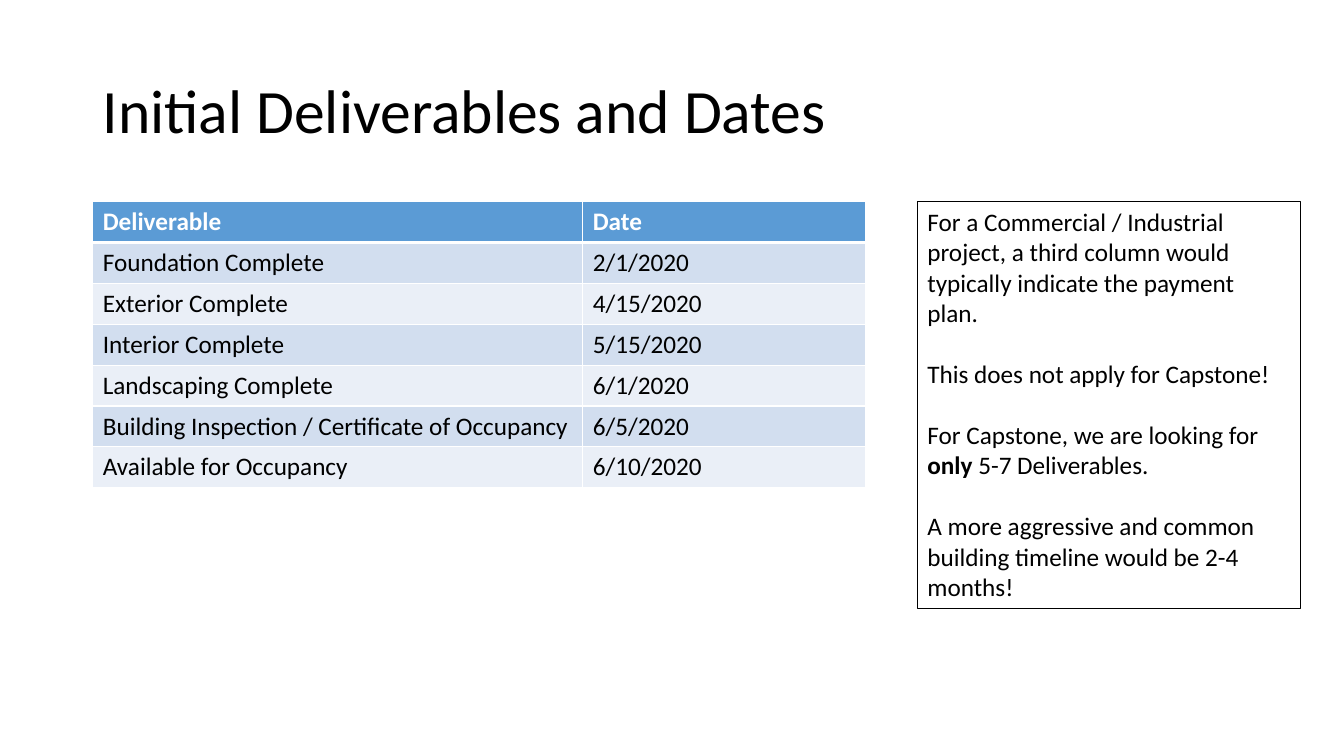
from pptx import Presentation
from pptx.dml.color import RGBColor
from pptx.enum.shapes import MSO_SHAPE
from pptx.enum.text import MSO_ANCHOR, PP_ALIGN
from pptx.oxml.ns import qn
from pptx.util import Inches, Pt
from lxml.etree import SubElement

FONT = "Calibri"
BLACK, WHITE = "000000", "FFFFFF"
HEADER_BLUE = "5B9BD5"
BANDS = ("D2DEEF", "EAEFF7")
LEFT, BODY_TOP = 0.92, 2
COLUMN_WIDTHS = (4.86, 2.81)
TABLE_HEIGHT = 2.84

DELIVERABLES = [
    ("Deliverable", "Date"),
    ("Foundation Complete", "2/1/2020"),
    ("Exterior Complete", "4/15/2020"),
    ("Interior Complete", "5/15/2020"),
    ("Landscaping Complete", "6/1/2020"),
    ("Building Inspection / Certificate of Occupancy", "6/5/2020"),
    ("Available for Occupancy", "6/10/2020"),
]
# Each paragraph is a list of pieces; every second piece is bold.
NOTES = [
    ["For a Commercial / Industrial project, a third column would "
     "typically indicate the payment plan."],
    ["This does not apply for Capstone!"],
    ["For Capstone, we are looking for ", "only", " 5-7 Deliverables."],
    ["A more aggressive and common building timeline would be 2-4 months!"],
]


def rgb(color):
    return RGBColor.from_string(color)


def add_text(p, text, size=18, color=BLACK, bold=False):
    r = p.add_run()
    r.text = text
    r.font.name = FONT
    r.font.size = Pt(size)
    r.font.bold = bold
    r.font.color.rgb = rgb(color)


def add_title(slide, text):
    sp = slide.shapes.add_textbox(Inches(LEFT), Inches(0.4),
                                  Inches(11.5), Inches(1.45))
    tf = sp.text_frame
    tf.word_wrap = True
    tf.vertical_anchor = MSO_ANCHOR.MIDDLE
    p = tf.paragraphs[0]
    p.line_spacing = 0.9
    add_text(p, text, size=44)


def set_borders(cell, bottom, top):
    tc_pr = cell._tc.get_or_add_tcPr()
    widths = (("lnL", 1), ("lnR", 1), ("lnT", top), ("lnB", bottom))
    for index, (side, width) in enumerate(widths):
        ln = SubElement(tc_pr, qn(f"a:{side}"), w=str(Pt(width)))
        fill = SubElement(ln, qn("a:solidFill"))
        SubElement(fill, qn("a:srgbClr"), val=WHITE)
        tc_pr.insert(index, ln)


def add_banded_table(slide, rows):
    frame = slide.shapes.add_table(
        len(rows), len(COLUMN_WIDTHS), Inches(LEFT), Inches(BODY_TOP),
        Inches(sum(COLUMN_WIDTHS)), Inches(TABLE_HEIGHT))
    table = frame.table
    for column, width in zip(table.columns, COLUMN_WIDTHS):
        column.width = Inches(width)
    for i, row in enumerate(rows):
        header = i == 0
        for j, text in enumerate(row):
            cell = table.cell(i, j)
            cell.fill.solid()
            cell.fill.fore_color.rgb = rgb(
                HEADER_BLUE if header else BANDS[(i - 1) % 2])
            set_borders(cell, bottom=3 if header else 1,
                        top=3 if i == 1 else 1)
            add_text(cell.text_frame.paragraphs[0], text,
                     color=WHITE if header else BLACK, bold=header)


def add_note_box(slide, notes):
    sp = slide.shapes.add_shape(MSO_SHAPE.RECTANGLE, Inches(9.1),
                                Inches(BODY_TOP), Inches(3.8), Inches(4.04))
    sp.shadow.inherit = False
    sp.fill.solid()
    sp.fill.fore_color.rgb = rgb(WHITE)
    sp.line.color.rgb = rgb(BLACK)
    sp.line.width = Pt(1)
    tf = sp.text_frame
    tf.word_wrap = True
    tf.vertical_anchor = MSO_ANCHOR.TOP
    for i, pieces in enumerate(notes):
        p = tf.add_paragraph() if i else tf.paragraphs[0]
        p.alignment = PP_ALIGN.LEFT
        if i:
            p.space_before = Pt(22)
        for j, piece in enumerate(pieces):
            add_text(p, piece, bold=j % 2 == 1)


def main():
    prs = Presentation()
    prs.slide_width, prs.slide_height = Inches(13.33), Inches(7.5)
    slide = prs.slides.add_slide(prs.slide_layouts[6])
    add_title(slide, "Initial Deliverables and Dates")
    add_banded_table(slide, DELIVERABLES)
    add_note_box(slide, NOTES)
    prs.save("out.pptx")


if __name__ == "__main__":
    main()
